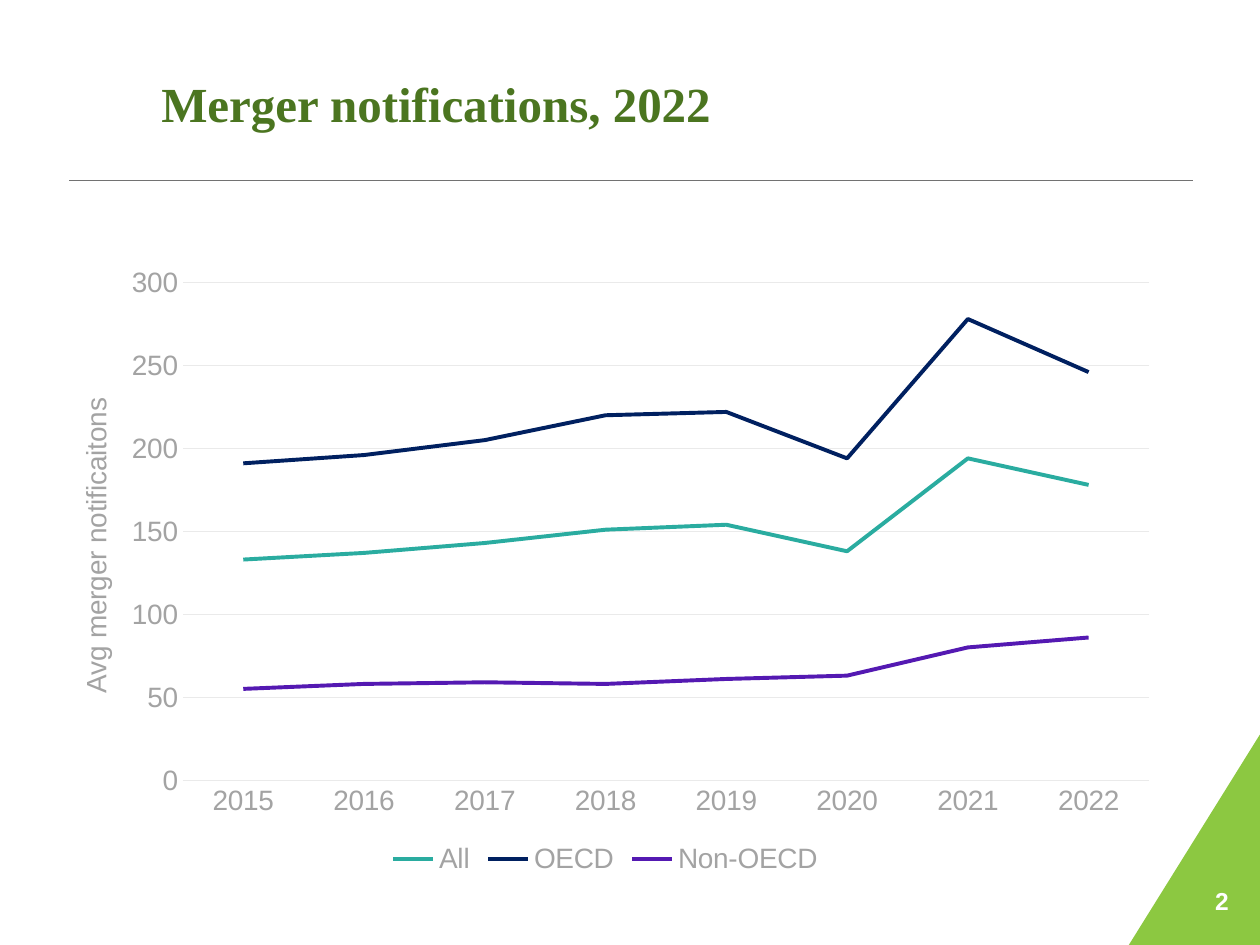
"""Build the merger notifications slide."""
from dataclasses import dataclass

from lxml.etree import SubElement
from pptx import Presentation
from pptx.chart.data import CategoryChartData
from pptx.dml.color import RGBColor
from pptx.enum.chart import XL_CHART_TYPE, XL_LEGEND_POSITION, XL_TICK_MARK
from pptx.enum.shapes import MSO_CONNECTOR, MSO_SHAPE
from pptx.enum.text import MSO_ANCHOR, PP_ALIGN
from pptx.oxml import parse_xml
from pptx.oxml.ns import nsdecls, qn
from pptx.util import Inches, Pt

YEARS = [str(year) for year in range(2015, 2023)]
NOTIFICATIONS = {
    "All": ("2AACA0", [133, 137, 143, 151, 154, 138, 194, 178]),
    "OECD": ("002060", [191, 196, 205, 220, 222, 194, 278, 246]),
    "Non-OECD": ("5419B2", [55, 58, 59, 58, 61, 63, 80, 86]),
}


@dataclass(frozen=True)
class Theme:
    """Colours and type formats of the slide."""

    rule: str = "727272"
    accent: str = "8CC841"
    grid: str = "EAEAEA"
    heading: tuple = ("Times New Roman", 28, True, "4B7520")
    number: tuple = ("Arial", 14, True, "FFFFFF")
    label: tuple = ("Arial", 16, False, "A3A3A3")


def box(*lengths):
    """Convert inch values to lengths."""
    return [Inches(length) for length in lengths]


def apply(target, formats):
    """Set each attribute of the target from a dict."""
    for name, value in formats.items():
        setattr(target, name, value)


def place(element, index, x, y, **size):
    """Give a chart part a manual layout in fractions of the chart."""
    layout = element.find(qn("c:layout"))
    if layout is None:
        layout = parse_xml(f"<c:layout {nsdecls('c')}/>")
        element.insert(index, layout)
    manual = SubElement(layout, qn("c:manualLayout"))
    settings = {"layoutTarget": "inner"} if size else {}
    settings.update(xMode="edge", yMode="edge", x=x, y=y, **size)
    for name, value in settings.items():
        SubElement(manual, qn(f"c:{name}")).set("val", str(value))


class SlideBuilder:
    """Holds the theme and the current slide."""

    def __init__(self, slide, theme):
        """Keep the slide and its theme."""
        self.slide = slide
        self.theme = theme

    def style_font(self, font, style):
        """Apply a type format to a font."""
        name, size, bold, color = style
        apply(font, {"name": name, "size": Pt(size), "bold": bold})
        font.color.rgb = RGBColor.from_string(color)

    def style_line(self, line, color, width):
        """Apply colour and width to a line."""
        line.color.rgb = RGBColor.from_string(color)
        line.width = Pt(width)

    def title(self, text, left, top, width, height):
        """Fill and move the title placeholder."""
        heading = self.slide.shapes.title
        bounds = box(left, top, width, height)
        apply(heading, dict(zip(("left", "top", "width", "height"), bounds)))
        frame = heading.text_frame
        apply(frame, {"text": text, "vertical_anchor": MSO_ANCHOR.MIDDLE, "word_wrap": True})
        frame.paragraphs[0].alignment = PP_ALIGN.LEFT
        self.style_font(frame.paragraphs[0].runs[0].font, self.theme.heading)

    def rule(self, left, top, width):
        """Draw a horizontal rule."""
        rule = self.slide.shapes.add_connector(
            MSO_CONNECTOR.STRAIGHT, *box(left, top, left + width, top))
        self.style_line(rule.line, self.theme.rule, 0.5)
        SubElement(rule._element.spPr, qn("a:effectLst"))

    def corner(self, left, top, width, height):
        """Draw the triangle in the lower right corner."""
        corner = self.slide.shapes.add_shape(
            MSO_SHAPE.RIGHT_TRIANGLE, *box(left, top, width, height))
        corner.shadow.inherit = False
        corner.fill.solid()
        corner.fill.fore_color.rgb = RGBColor.from_string(self.theme.accent)
        corner.line.fill.background()
        corner._element.spPr.xfrm.set("flipH", "1")

    def page_number(self, text, left, top, width, height):
        """Write the page number."""
        frame = self.slide.shapes.add_textbox(*box(left, top, width, height)).text_frame
        frame.word_wrap = False
        paragraph = frame.paragraphs[0]
        apply(paragraph, {"text": text, "alignment": PP_ALIGN.RIGHT, "space_after": Pt(6)})
        self.style_font(paragraph.runs[0].font, self.theme.number)

    def line_chart(self, years, notifications, axis_title, *bounds):
        """Add the line chart with its axes and legend."""
        data = CategoryChartData(number_format="0")
        data.categories = years
        for name, (_, values) in notifications.items():
            data.add_series(name, values)
        chart = self.slide.shapes.add_chart(XL_CHART_TYPE.LINE, *box(*bounds), data).chart
        apply(chart, {"has_title": False, "has_legend": True})
        self.style_font(chart.font, self.theme.label)
        apply(chart.legend, {"position": XL_LEGEND_POSITION.BOTTOM, "include_in_layout": False})
        self.style_font(chart.legend.font, self.theme.label)
        plot = chart.plots[0]
        plot.vary_by_categories = False
        for series, (color, _) in zip(plot.series, notifications.values()):
            series.smooth = False
            self.style_line(series.format.line, color, 2.25)
        self.axes(chart, axis_title)
        place(chart._chartSpace.chart.plotArea, 0, 0.127, 0.043, w=0.853, h=0.798)

    def axes(self, chart, axis_title):
        """Format both axes and title the value axis."""
        years, amounts = chart.category_axis, chart.value_axis
        for axis in (years, amounts):
            apply(axis, {"major_tick_mark": XL_TICK_MARK.NONE,
                         "minor_tick_mark": XL_TICK_MARK.NONE})
            self.style_font(axis.tick_labels.font, self.theme.label)
        self.style_line(years.format.line, self.theme.grid, 0.75)
        amounts.format.line.fill.background()
        apply(amounts, {"minimum_scale": 0, "maximum_scale": 300, "major_unit": 50,
                        "has_major_gridlines": True})
        self.style_line(amounts.major_gridlines.format.line, self.theme.grid, 0.75)
        apply(amounts.tick_labels, {"number_format": "0", "number_format_is_linked": False})
        frame = amounts.axis_title.text_frame
        frame.text = axis_title
        frame._txBody.bodyPr.set("rot", "-5400000")
        self.style_font(frame.paragraphs[0].runs[0].font, self.theme.label)
        place(amounts.axis_title._element, 1, 0.03, 0.22)


def main():
    """Build and save the slide."""
    deck = Presentation()
    apply(deck, {"slide_width": Inches(10), "slide_height": Inches(7.5)})
    builder = SlideBuilder(deck.slides.add_slide(deck.slide_layouts[5]), Theme())
    builder.rule(0.55, 1.43, 8.92)
    builder.corner(8.96, 5.83, 1.04, 1.67)
    builder.title("Merger notifications, 2022", 1.18, 0.26, 8.11, 1.12)
    builder.page_number("2", 9.25, 6.98, 0.6, 0.4)
    builder.line_chart(YEARS, NOTIFICATIONS, "Avg merger notificaitons", 0.31, 2.03, 8.99, 4.95)
    deck.save("out.pptx")


if __name__ == "__main__":
    main()
